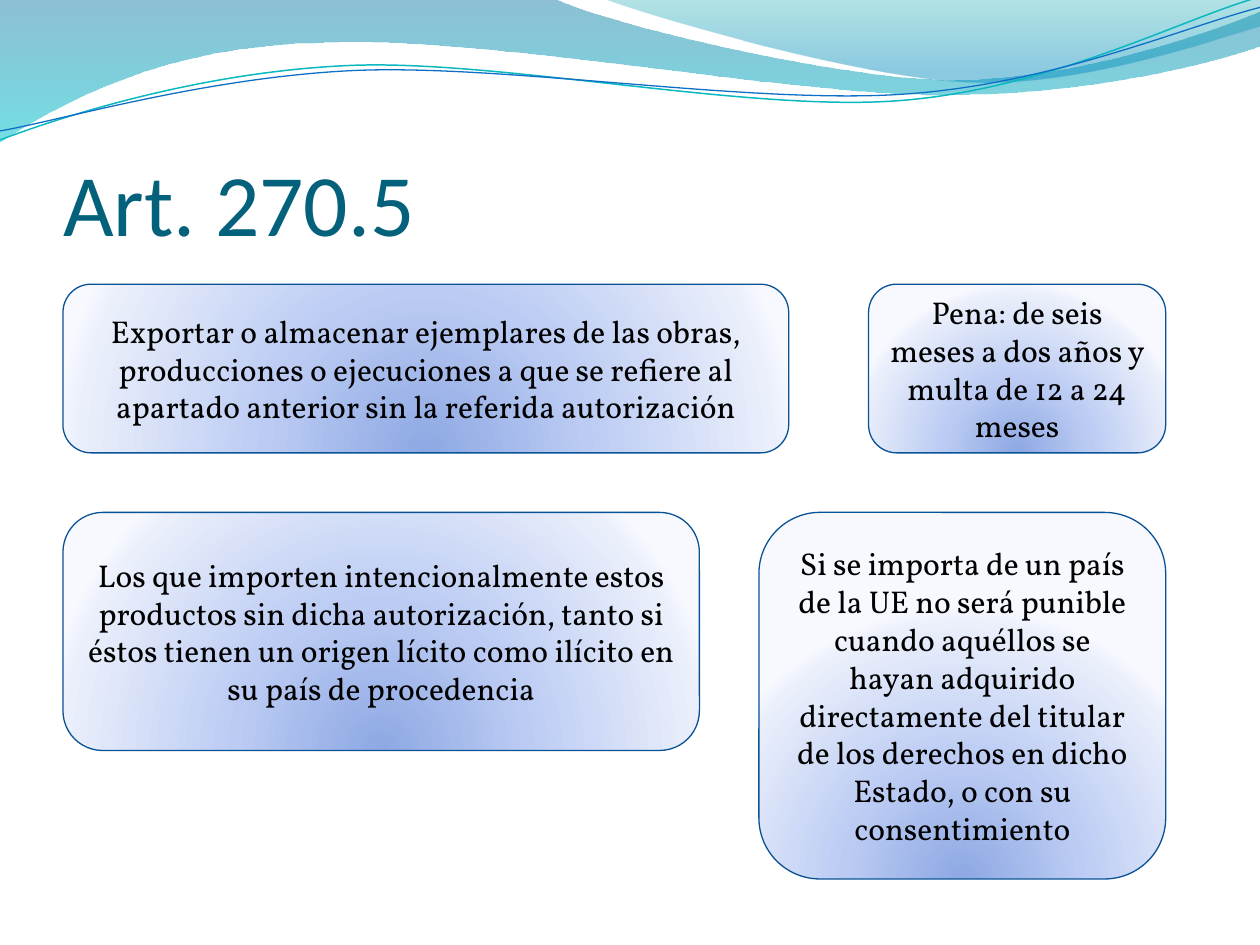
from dataclasses import dataclass
from math import cos, radians, sin

from lxml.etree import SubElement
from pptx import Presentation
from pptx.dml.color import RGBColor
from pptx.enum.shapes import MSO_SHAPE
from pptx.enum.text import MSO_ANCHOR, MSO_AUTO_SIZE, PP_ALIGN
from pptx.oxml.ns import qn
from pptx.util import Cm, Pt


@dataclass(frozen=True)
class Theme:
    title_color: str = "04617B"
    text_color: str = "000000"
    card_line: str = "095295"
    teal_line: str = "0AB8BF"
    blue_line: str = "0F6FC6"
    title_font: str = "Calibri"
    body_font: str = "Vollkorn"
    title_size: int = 50
    body_size: int = 18
    # Gradient stops: position, colour, opacity (all but colour in percent)
    card_stops: tuple = ((0, "8DA8E3", 100), (43, "BBCBF3", 100),
                         (93, "EAEFFB", 100), (100, "F7F9FF", 100))
    wide_wave_stops: tuple = ((0, "0074A1", 45), (100, "00C6CF", 55))
    right_wave_stops: tuple = ((0, "00A1A9", 30), (80, "008BBF", 45))


THEME = Theme()

# Outlines in cm: a pair is a straight step, six numbers are a Bézier curve
WIDE_WAVE = [
    (0, -0.03), (11.18, -0.03),
    (12.09, 0.43, 16.87, 1.6, 19.25, 1.6),
    (21.67, 1.6, 24.33, 0.66, 25.4, 0.23),
    (25.43, 0.91),
    (24.97, 1.12, 22.1, 1.93, 18.95, 1.91),
    (15.8, 1.91, 9.7, 0.71, 6.53, 0.86),
    (3.28, 0.89, 1.17, 2.11, -0.03, 2.87),
    (0, -0.03),
]
RIGHT_WAVE = [
    (12.17, -0.03),
    (12.93, 0.28, 17.32, 1.57, 19.53, 1.65),
    (21.74, 1.75, 24.41, 0.81, 25.4, 0.53),
    (25.4, 0),
    (12.17, -0.03),
]
TEAL_CURVE = [
    (0, 2.82),
    (1.22, 2.36, 4.01, 1.45, 7.04, 1.32),
    (10.03, 1.19, 15.06, 2.26, 18.11, 2.03),
    (21.16, 1.8, 23.83, 0.38, 25.35, -0.05),
]
BLUE_CURVE = [
    (0, 2.64),
    (1.19, 2.44, 4.17, 1.55, 7.19, 1.42),
    (10.24, 1.3, 15.16, 2.11, 18.21, 1.9),
    (21.23, 1.7, 23.9, 0.53, 25.4, 0.15),
]
CURVE_TILT = -2.7

LEFT, RIGHT = 1.27, 23.5
# Each row: top, then (width, height, text) of its left and right cards
CARD_ROWS = [
    (5.73,
     (14.63, 3.4, "Exportar o almacenar ejemplares de las obras, producciones o "
                  "ejecuciones a que se refiere al apartado anterior sin la "
                  "referida autorización"),
     (5.99, 3.4, "Pena: de seis meses a dos años y multa de 12 a 24 meses")),
    (10.33,
     (12.83, 4.8, "Los que importen intencionalmente estos productos sin dicha "
                  "autorización, tanto si éstos tienen un origen lícito como "
                  "ilícito en su país de procedencia"),
     (8.2, 7.39, "Si se importa de un país de la UE no será punible cuando "
                 "aquéllos se hayan adquirido directamente del titular de los "
                 "derechos en dicho Estado, o con su consentimiento")),
]


def set_attributes(target, values):
    for name, value in values.items():
        setattr(target, name, value)


def set_line(shape, color, width):
    shape.line.color.rgb = RGBColor.from_string(color)
    shape.line.width = Pt(width)


def set_gradient(shape, stops, radial=False):
    shape.fill.gradient()
    gradient = shape._element.spPr.find(qn("a:gradFill"))
    for child in list(gradient):
        gradient.remove(child)
    stop_list = SubElement(gradient, qn("a:gsLst"))
    for position, color, opacity in stops:
        stop = SubElement(stop_list, qn("a:gs"), pos=str(position * 1000))
        color_element = SubElement(stop, qn("a:srgbClr"), val=color)
        if opacity < 100:
            SubElement(color_element, qn("a:alpha"), val=str(opacity * 1000))
    if radial:
        shade = SubElement(gradient, qn("a:path"), path="circle")
        SubElement(shade, qn("a:fillToRect"),
                   l="50000", t="130000", r="50000", b="-30000")
    else:
        SubElement(gradient, qn("a:lin"), ang="5400000", scaled="1")


def rotate_outline(outline, degrees, pivot):
    """Turn every point of the outline clockwise about the pivot."""
    cosine, sine = cos(radians(degrees)), sin(radians(degrees))
    rotated = []
    for segment in outline:
        values = []
        for x, y in zip(segment[::2], segment[1::2]):
            dx, dy = x - pivot[0], y - pivot[1]
            values += [pivot[0] + dx * cosine - dy * sine,
                       pivot[1] + dx * sine + dy * cosine]
        rotated.append(tuple(values))
    return rotated


def add_outline(slide, outline, close):
    """Build the outline from its points, then join triples into curves."""
    start, *points = [(Cm(x), Cm(y)) for segment in outline
                      for x, y in zip(segment[::2], segment[1::2])]
    builder = slide.shapes.build_freeform(*start)
    builder.add_line_segments(points, close=close)
    shape = builder.convert_to_shape()
    shape.shadow.inherit = False
    steps = iter(list(shape._element.iter(qn("a:lnTo"))))
    for segment in outline[1:]:
        step = next(steps)
        if len(segment) == 6:
            step.tag = qn("a:cubicBezTo")
            for extra in (next(steps), next(steps)):
                step.append(extra[0])
                extra.getparent().remove(extra)
    return shape


def add_wave(slide, outline, stops):
    wave = add_outline(slide, outline, close=True)
    set_gradient(wave, stops)
    wave.line.fill.background()


def add_curve(slide, outline, pivot, color, width):
    level = rotate_outline(outline, -CURVE_TILT, pivot)
    curve = add_outline(slide, level, close=False)
    curve.rotation = CURVE_TILT
    curve.fill.background()
    set_line(curve, color, width)


def write_text(shape, text, alignment, font_values, color):
    paragraph = shape.text_frame.paragraphs[0]
    paragraph.text = text
    paragraph.alignment = alignment
    font = paragraph.runs[0].font
    set_attributes(font, font_values)
    font.color.rgb = RGBColor.from_string(color)


def format_title(slide, text):
    title = slide.shapes.title
    set_attributes(title, {"left": Cm(LEFT), "top": Cm(1.95),
                           "width": Cm(23.06), "height": Cm(3.17)})
    set_attributes(title.text_frame, {
        "margin_left": 0, "margin_right": 0, "margin_bottom": 0,
        "margin_top": Cm(0.13), "vertical_anchor": MSO_ANCHOR.BOTTOM,
        "auto_size": MSO_AUTO_SIZE.NONE, "word_wrap": True})
    write_text(title, text, PP_ALIGN.LEFT,
               {"name": THEME.title_font, "size": Pt(THEME.title_size)},
               THEME.title_color)
    # Bring the title in front of the waves
    slide.shapes._spTree.append(title._element)


def add_card(slide, left, top, width, height, text):
    card = slide.shapes.add_shape(MSO_SHAPE.ROUNDED_RECTANGLE,
                                  Cm(left), Cm(top), Cm(width), Cm(height))
    card.shadow.inherit = False
    set_gradient(card, THEME.card_stops, radial=True)
    set_line(card, THEME.card_line, 0.75)
    set_attributes(card.text_frame, {"vertical_anchor": MSO_ANCHOR.MIDDLE,
                                     "word_wrap": True})
    write_text(card, text, PP_ALIGN.CENTER,
               {"name": THEME.body_font, "size": Pt(THEME.body_size)},
               THEME.text_color)


def main():
    presentation = Presentation()
    set_attributes(presentation, {"slide_width": Cm(25.4),
                                  "slide_height": Cm(19.05)})
    slide = presentation.slides.add_slide(presentation.slide_layouts[5])

    # Waves along the top
    add_wave(slide, WIDE_WAVE, THEME.wide_wave_stops)
    add_wave(slide, RIGHT_WAVE, THEME.right_wave_stops)
    add_curve(slide, TEAL_CURVE, (12.67, 1.46), THEME.teal_line, 0.85)
    add_curve(slide, BLUE_CURVE, (12.69, 1.5), THEME.blue_line, 0.75)

    format_title(slide, "Art. 270.5")

    # Cards, flush with the left and right edges
    for top, left_card, right_card in CARD_ROWS:
        add_card(slide, LEFT, top, *left_card)
        add_card(slide, RIGHT - right_card[0], top, *right_card)

    presentation.save("out.pptx")


if __name__ == "__main__":
    main()
